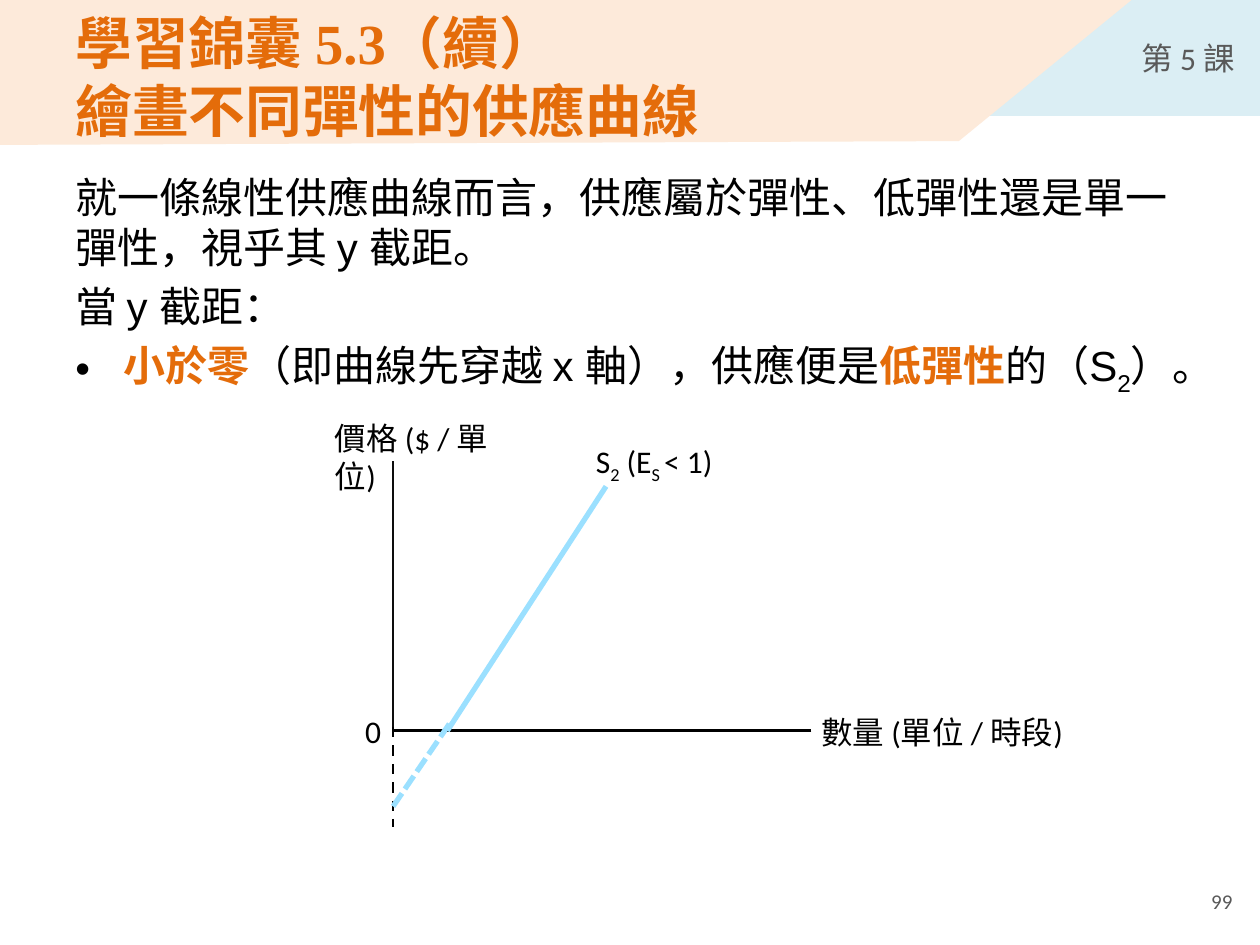
from lxml import etree
from pptx import Presentation
from pptx.dml.color import RGBColor
from pptx.enum.dml import MSO_LINE
from pptx.enum.shapes import MSO_CONNECTOR, MSO_SHAPE
from pptx.enum.text import MSO_ANCHOR, PP_ALIGN
from pptx.oxml.ns import qn
from pptx.util import Inches, Pt

TOP, MIDDLE = MSO_ANCHOR.TOP, MSO_ANCHOR.MIDDLE
LEFT, RIGHT = PP_ALIGN.LEFT, PP_ALIGN.RIGHT
DASH, SHORT_DASH = MSO_LINE.DASH, MSO_LINE.SQUARE_DOT
STRAIGHT, RECTANGLE = MSO_CONNECTOR.STRAIGHT, MSO_SHAPE.RECTANGLE

COLORS = {
    "lesson": "DBEEF4", "banner": "FDEADA", "accent": "E46C0A", "text": "000000",
    "muted": "595959", "price_axis": "0D0D0D", "supply": "9BE0FF",
}
COLUMNS, ROWS = 100, 75
SLIDE_WIDTH, SLIDE_HEIGHT = Inches(10), Inches(7.5)

LESSON_BOX = (73.6, 0, 26.4, 9.2)
BANNER = [(0, 0), (89.8, 0), (76.1, 11.2), (0, 11.5)]
TITLE = "學習錦囊 5.3（續）\v繪畫不同彈性的供應曲線"
BODY = [
    [("就一條線性供應曲線而言，供應屬於彈性、低彈性還是單一彈性，視乎其 y 截距。", "plain")],
    [("當 y 截距：", "plain")],
    [("小於零", "key"), ("（即曲線先穿越 x 軸），供應便是", "plain"), ("低彈性", "key"),
     ("的（S", "plain"), ("2", "sub"), ("）。", "plain")],
]
BULLETED = {2}
CURVE_LABEL = [("S", "plain"), ("2", "sub"), (" (E", "plain"), ("S ", "sub"), ("< 1)", "plain")]

ORIGIN = (31.2, 58)
LINES = [
    ((31.2, 36.6), ORIGIN, "price_axis", 1.5, None),
    ((64.4, 58), ORIGIN, "text", 1.5, None),
    ((31.2, 57.7), (31.2, 65.6), "text", 1.5, DASH),
    ((35.5, 58), (48.1, 38.6), "supply", 3, None),
    ((31.2, 64), (35.7, 57.4), "supply", 3, SHORT_DASH),
]
CHART_LABELS = [
    ((28, 56, 5.8, 4.1), [("0", "plain")]),
    ((25.6, 32.8, 17.3, 4), [("價格 ($ / 單位)", "plain")]),
    ((64.2, 56.1, 25.2, 4), [("數量 (單位 / 時段)", "plain")]),
    ((46.3, 34.6, 15.5, 4), CURVE_LABEL),
]


def place(column, row):
    return round(SLIDE_WIDTH * column / COLUMNS), round(SLIDE_HEIGHT * row / ROWS)


def place_box(box):
    return (*place(*box[:2]), *place(*box[2:]))


def color(name):
    return RGBColor.from_string(COLORS[name])


def format_font(font, size, face, color_name, bold=False):
    font.size, font.name, font.bold = Pt(size), face, bold
    font.color.rgb = color(color_name)


def paint(shape, color_name):
    shape.shadow.inherit = False
    shape.fill.solid()
    shape.fill.fore_color.rgb = color(color_name)
    shape.line.fill.background()


def write_runs(paragraph, runs, size, face):
    for text, style in runs:
        run = paragraph.add_run()
        run.text = text
        key = style == "key"
        format_font(run.font, size, face, "accent" if key else "text", key)
        if style == "sub":
            run.font._element.set("baseline", "-25000")


def add_bullet(paragraph):
    properties = paragraph._p.get_or_add_pPr()
    indent = Inches(0.38)
    properties.set("marL", str(indent))
    properties.set("indent", str(-indent))
    bullet_color = etree.SubElement(properties, qn("a:buClr"))
    etree.SubElement(bullet_color, qn("a:srgbClr"), val=COLORS["text"])
    etree.SubElement(properties, qn("a:buFont"), typeface="Arial")
    etree.SubElement(properties, qn("a:buChar"), char="•")


def add_text(slide, box, paragraphs, size, face, anchor=TOP, bulleted=()):
    frame = slide.shapes.add_textbox(*place_box(box)).text_frame
    frame.word_wrap, frame.vertical_anchor = True, anchor
    for index, runs in enumerate(paragraphs):
        paragraph = frame.add_paragraph() if index else frame.paragraphs[0]
        if index in bulleted:
            add_bullet(paragraph)
        if index:
            paragraph.space_before = Pt(5)
        write_runs(paragraph, runs, size, face)


def set_label(frame, text, size, face, color_name, alignment, bold=False):
    frame.word_wrap, frame.vertical_anchor = True, MIDDLE
    frame.text = text
    paragraph = frame.paragraphs[0]
    paragraph.alignment = alignment
    for run in paragraph.runs:
        format_font(run.font, size, face, color_name, bold)


def add_line(slide, start, end, color_name, width, dash):
    connector = slide.shapes.add_connector(STRAIGHT, *place(*start), *place(*end))
    connector.line.color.rgb = color(color_name)
    connector.line.width = Pt(width)
    if dash:
        connector.line.dash_style = dash
    etree.SubElement(connector._element.spPr, qn("a:effectLst"))


def main():
    presentation = Presentation()
    presentation.slide_width, presentation.slide_height = SLIDE_WIDTH, SLIDE_HEIGHT
    slide = presentation.slides.add_slide(presentation.slide_layouts[6])

    lesson = slide.shapes.add_shape(RECTANGLE, *place_box(LESSON_BOX))
    paint(lesson, "lesson")
    lesson.text_frame.margin_right = Inches(0.2)
    set_label(lesson.text_frame, "第 5 課", 18, "Calibri", "muted", RIGHT)

    corners = [place(*corner) for corner in BANNER]
    builder = slide.shapes.build_freeform(*corners[0])
    builder.add_line_segments(corners[1:], close=True)
    paint(builder.convert_to_shape(), "banner")

    title = slide.shapes.add_textbox(*place_box((5, 2.1, 71, 7.9)))
    set_label(title.text_frame, TITLE, 32.4, "Times New Roman", "accent", LEFT, True)
    add_text(slide, (5, 13.1, 90, 18.8), BODY, 24, "Arial", bulleted=BULLETED)
    number = slide.shapes.add_textbox(*place_box((75.5, 69.5, 23.3, 4)))
    set_label(number.text_frame, "99", 12, "Calibri", "muted", RIGHT)

    for line in LINES:
        add_line(slide, *line)
    for box, runs in CHART_LABELS:
        add_text(slide, box, [runs], 18, "Calibri")

    presentation.save("out.pptx")


if __name__ == "__main__":
    main()
